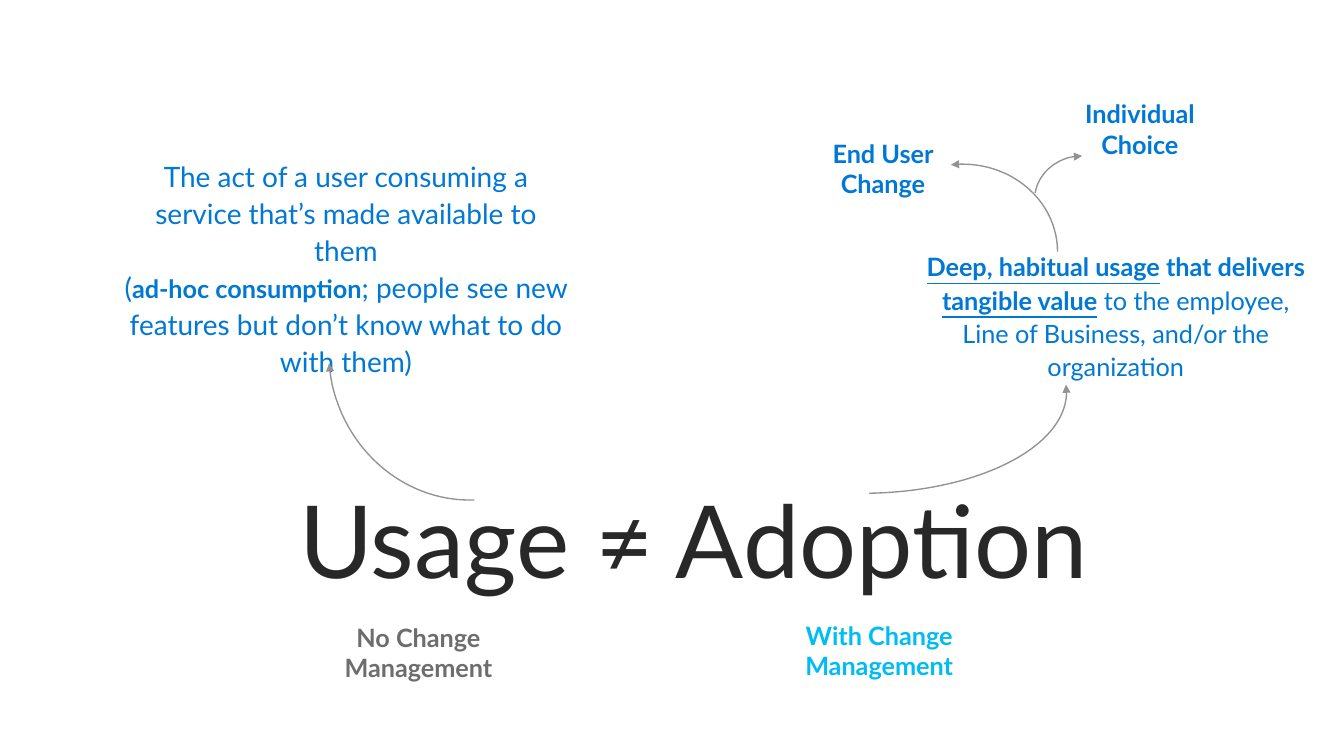
from dataclasses import dataclass

import lxml.etree
import pptx
import pptx.dml.color
import pptx.enum.shapes
import pptx.enum.text
import pptx.oxml.ns
import pptx.shapes.autoshape
import pptx.slide
import pptx.text.text
import pptx.util

Cm = pptx.util.Cm
Anchor = pptx.enum.text.MSO_ANCHOR

COLORS = {
    "headline": "282828",
    "definition": "0078D4",
    "unmanaged": "6C6E6C",
    "managed": "00BCF2",
    "arrow": "939393",
}
FONT = "Lato"
BODY_SIZE = 18.4
LABEL_WIDTH, LABEL_HEIGHT = 5.41, 1.85


@dataclass(frozen=True)
class Span:
    text: str
    size: float = BODY_SIZE
    bold: bool = False
    underline: bool = False


@dataclass(frozen=True)
class Definition:
    left: float
    top: float
    width: float
    height: float
    spans: list[Span]


@dataclass(frozen=True)
class Label:
    left: float
    top: float
    lines: list[str]
    color: str = "definition"


@dataclass(frozen=True)
class CurvedArrow:
    """An arc between two angles in degrees, with its arrowhead at the start."""
    left: float
    top: float
    width: float
    height: float
    start: float
    end: float
    rotation: float = 0
    mirrored: bool = False


DEFINITIONS = [
    Definition(2.92, 4.32, 11.94, 5.08, [
        Span("The act of a user consuming a service that’s made available to them\n(", 20.4),
        Span("ad-hoc consumption", bold=True),
        Span("; people see new features but don’t know what to do with them)", 20.4),
    ]),
    Definition(23.52, 6.25, 10.31, 3.71, [
        Span("Deep, habitual usage", bold=True, underline=True),
        Span(" that delivers ", bold=True),
        Span("tangible value", bold=True, underline=True),
        Span(" to the employee, Line of Business, and/or the organization"),
    ]),
]

LABELS = [
    Label(19.99, 3.4, ["End User", "Change"]),
    Label(26.59, 2.39, ["Individual Choice"]),
    Label(8.05, 15.85, ["No Change Management"], "unmanaged"),
    Label(19.89, 15.8, ["With Change Management"], "managed"),
]

CURVED_ARROWS = [
    CurvedArrow(8.48, 5.54, 6.88, 7.34, 341.49, 73.68, rotation=339.4, mirrored=True),
    CurvedArrow(16.89, 7.47, 10.52, 5.21, 357.94, 85.82),
    CurvedArrow(22.3, 4.22, 4.88, 4.5, 262.32, 0),
    CurvedArrow(26.59, 4.01, 2.44, 2.24, 270, 351.95, mirrored=True),
]


def write_text(
    frame: pptx.text.text.TextFrame,
    paragraphs: list[list[Span]],
    *,
    color: str,
    anchor: Anchor = Anchor.MIDDLE,
    line_spacing: float = 1.0,
    side_margin: float = 0.25,
    end_margin: float = 0.13,
) -> None:
    frame.word_wrap = True
    frame.auto_size = pptx.enum.text.MSO_AUTO_SIZE.SHAPE_TO_FIT_TEXT
    frame.vertical_anchor = anchor
    frame.margin_left = frame.margin_right = Cm(side_margin)
    frame.margin_top = frame.margin_bottom = Cm(end_margin)
    for index, spans in enumerate(paragraphs):
        paragraph = frame.add_paragraph() if index else frame.paragraphs[0]
        paragraph.alignment = pptx.enum.text.PP_ALIGN.CENTER
        paragraph.line_spacing = line_spacing
        for span in spans:
            for piece_index, piece in enumerate(span.text.split("\n")):
                if piece_index:
                    paragraph.add_line_break()
                run = paragraph.add_run()
                run.text = piece
                run.font.name = FONT
                run.font.size = pptx.util.Pt(span.size)
                run.font.bold = span.bold
                run.font.underline = span.underline
                run.font.color.rgb = pptx.dml.color.RGBColor.from_string(COLORS[color])


def set_headline(slide: pptx.slide.Slide) -> None:
    headline = slide.shapes.title
    headline.left, headline.top = Cm(1.83), Cm(12.27)
    headline.width, headline.height = Cm(32), Cm(3.2)
    write_text(headline.text_frame, [[Span("Usage ≠ Adoption", 73.4)]], color="headline",
               anchor=Anchor.TOP, side_margin=0, end_margin=0)


def add_definition(slide: pptx.slide.Slide, definition: Definition) -> None:
    box = slide.shapes.add_textbox(Cm(definition.left), Cm(definition.top),
                                   Cm(definition.width), Cm(definition.height))
    write_text(box.text_frame, [definition.spans], color="definition", line_spacing=1.1)


def add_label(slide: pptx.slide.Slide, label: Label) -> None:
    box = slide.shapes.add_textbox(Cm(label.left), Cm(label.top),
                                   Cm(LABEL_WIDTH), Cm(LABEL_HEIGHT))
    write_text(box.text_frame, [[Span(line, bold=True)] for line in label.lines],
               color=label.color, side_margin=0.4)


def add_curved_arrow(slide: pptx.slide.Slide, arrow: CurvedArrow) -> None:
    arc = slide.shapes.add_shape(
        pptx.enum.shapes.MSO_SHAPE.ARC,
        Cm(arrow.left), Cm(arrow.top), Cm(arrow.width), Cm(arrow.height))
    # Angles are stored in 60000ths of a degree, adjustments in 100000ths.
    arc.adjustments[0] = arrow.start * 0.6
    arc.adjustments[1] = arrow.end * 0.6
    arc.rotation = arrow.rotation
    arc.shadow.inherit = False
    arc.fill.background()
    arc.line.color.rgb = pptx.dml.color.RGBColor.from_string(COLORS["arrow"])
    arc.line.width = pptx.util.Pt(1)
    properties = arc.element.spPr
    if arrow.mirrored:
        properties.find(pptx.oxml.ns.qn("a:xfrm")).set("flipH", "1")
    outline = properties.find(pptx.oxml.ns.qn("a:ln"))
    lxml.etree.SubElement(outline, pptx.oxml.ns.qn("a:headEnd"), type="triangle")


def main() -> None:
    presentation = pptx.Presentation()
    presentation.slide_width, presentation.slide_height = Cm(34.54), Cm(19.43)
    slide = presentation.slides.add_slide(presentation.slide_layouts.get_by_name("Title Only"))
    set_headline(slide)
    for definition in DEFINITIONS:
        add_definition(slide, definition)
    for label in LABELS:
        add_label(slide, label)
    for arrow in CURVED_ARROWS:
        add_curved_arrow(slide, arrow)
    presentation.save("out.pptx")


if __name__ == "__main__":
    main()
